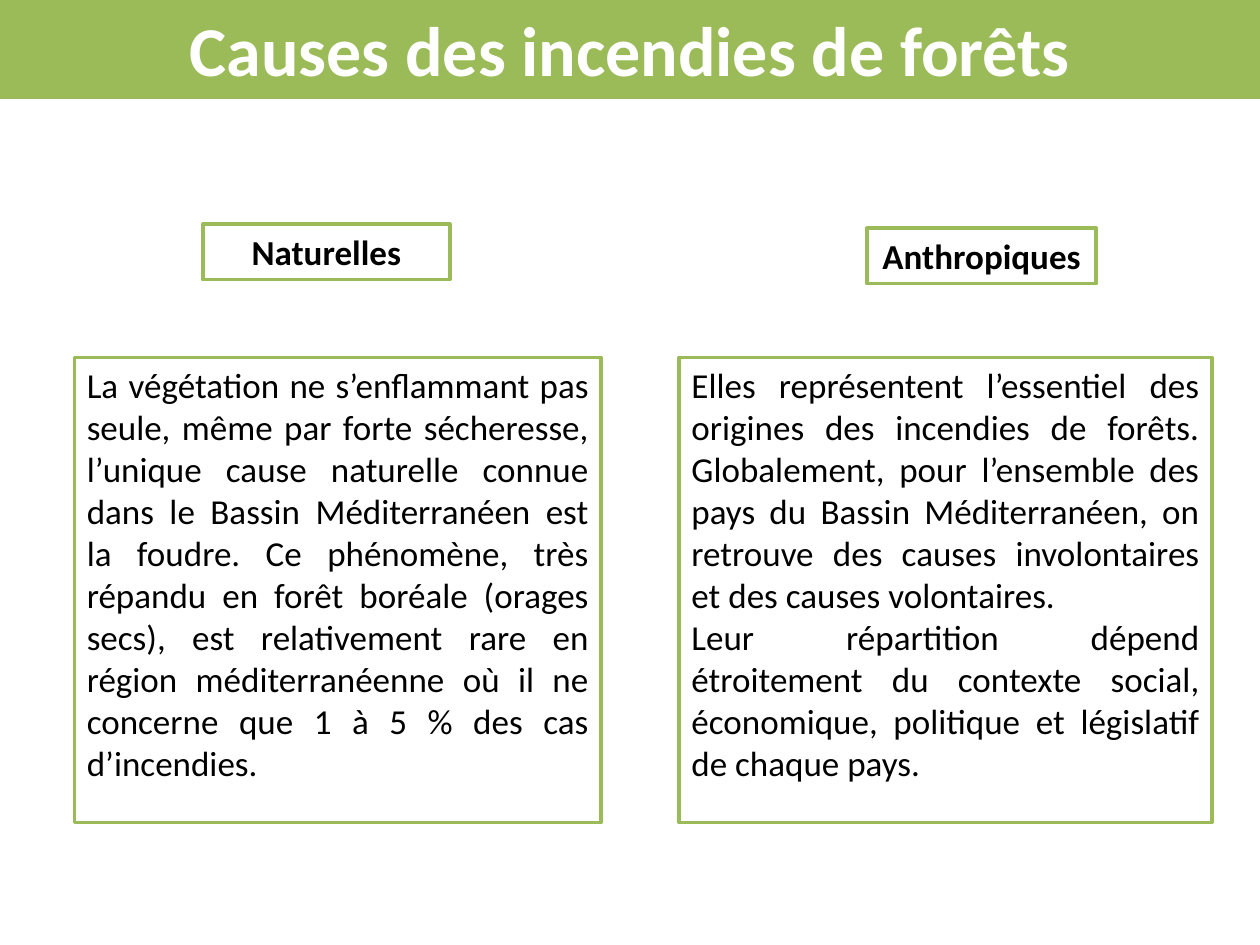
from dataclasses import dataclass

from pptx import Presentation
from pptx.dml.color import RGBColor
from pptx.enum.shapes import MSO_SHAPE
from pptx.enum.text import MSO_ANCHOR, MSO_AUTO_SIZE, PP_ALIGN
from pptx.util import Cm, Pt

RECTANGLE = MSO_SHAPE.RECTANGLE
TOP, MIDDLE = MSO_ANCHOR.TOP, MSO_ANCHOR.MIDDLE
CENTER, JUSTIFY = PP_ALIGN.CENTER, PP_ALIGN.JUSTIFY
NO_AUTOFIT = MSO_AUTO_SIZE.NONE
TITLE_ONLY = 5


@dataclass(frozen=True)
class Theme:
    font: str = "Calibri"
    green: RGBColor = RGBColor(0x9B, 0xBB, 0x59)
    white: RGBColor = RGBColor(0xFF, 0xFF, 0xFF)
    black: RGBColor = RGBColor(0x00, 0x00, 0x00)
    title_size: Pt = Pt(40)
    text_size: Pt = Pt(20)
    border: Pt = Pt(2)


@dataclass(frozen=True)
class Frame:
    left: float
    top: float
    width: float
    height: float


@dataclass(frozen=True)
class Cause:
    name: str
    name_frame: Frame
    paragraphs: tuple[str, ...]
    text_frame: Frame


THEME = Theme()
PAGE_WIDTH, PAGE_HEIGHT = 25.4, 19.05
TITLE = "Causes des incendies de forêts"
TITLE_FRAME = Frame(0, 0, PAGE_WIDTH, 1.96)
LABEL_HEIGHT = 1.12
TEXT_TOP, TEXT_HEIGHT = 7.21, 9.37

CAUSES = (
    Cause(
        "Naturelles",
        Frame(4.09, 4.52, 4.98, LABEL_HEIGHT),
        (
            "La végétation ne s’enflammant pas seule, même par forte sécheresse, "
            "l’unique cause naturelle connue dans le Bassin Méditerranéen est la "
            "foudre. Ce phénomène, très répandu en forêt boréale (orages secs), est "
            "relativement rare en région méditerranéenne où il ne concerne que "
            "1 à 5 % des cas d’incendies.",
        ),
        Frame(1.5, TEXT_TOP, 10.62, TEXT_HEIGHT),
    ),
    Cause(
        "Anthropiques",
        Frame(17.48, 4.6, 4.62, LABEL_HEIGHT),
        (
            "Elles représentent l’essentiel des origines des incendies de forêts. "
            "Globalement, pour l’ensemble des pays du Bassin Méditerranéen, on "
            "retrouve des causes involontaires et des causes volontaires.",
            "Leur répartition dépend étroitement du contexte social, économique, "
            "politique et législatif de chaque pays.",
        ),
        Frame(13.69, TEXT_TOP, 10.74, TEXT_HEIGHT),
    ),
)

LABEL_FONT = {"name": THEME.font, "size": THEME.text_size, "bold": True}
BODY_FONT = {**LABEL_FONT, "bold": False}
TITLE_FONT = {**LABEL_FONT, "size": THEME.title_size}


def set_attributes(target, values: dict) -> None:
    for name, value in values.items():
        setattr(target, name, value)


def paint(box, fill: RGBColor) -> None:
    """Give the box a solid fill and the green border."""
    box.fill.solid()
    box.fill.fore_color.rgb = fill
    box.line.color.rgb = THEME.green
    box.line.width = THEME.border


def write(box, paragraphs: tuple[str, ...], font: dict, color: RGBColor,
          alignment: PP_ALIGN, anchor: MSO_ANCHOR) -> None:
    frame = box.text_frame
    set_attributes(frame, {"word_wrap": True, "auto_size": NO_AUTOFIT,
                           "vertical_anchor": anchor})
    for index, text in enumerate(paragraphs):
        para = frame.add_paragraph() if index else frame.paragraphs[0]
        para.alignment = alignment
        span = para.add_run()
        span.text = text
        set_attributes(span.font, font)
        span.font.color.rgb = color


def add_box(page, place: Frame):
    box = page.shapes.add_shape(RECTANGLE, Cm(place.left), Cm(place.top),
                                Cm(place.width), Cm(place.height))
    box.shadow.inherit = False
    paint(box, THEME.white)
    return box


def add_title(page) -> None:
    title = page.shapes.title
    for side in ("left", "top", "width", "height"):
        setattr(title, side, Cm(getattr(TITLE_FRAME, side)))
    paint(title, THEME.green)
    write(title, (TITLE,), TITLE_FONT, THEME.white, CENTER, MIDDLE)


def add_cause(page, cause: Cause) -> None:
    label = add_box(page, cause.name_frame)
    write(label, (cause.name,), LABEL_FONT, THEME.black, CENTER, MIDDLE)
    body = add_box(page, cause.text_frame)
    write(body, cause.paragraphs, BODY_FONT, THEME.black, JUSTIFY, TOP)


def main() -> None:
    deck = Presentation()
    deck.slide_width, deck.slide_height = Cm(PAGE_WIDTH), Cm(PAGE_HEIGHT)
    page = deck.slides.add_slide(deck.slide_layouts[TITLE_ONLY])
    add_title(page)
    for cause in CAUSES:
        add_cause(page, cause)
    deck.save("out.pptx")


if __name__ == "__main__":
    main()
